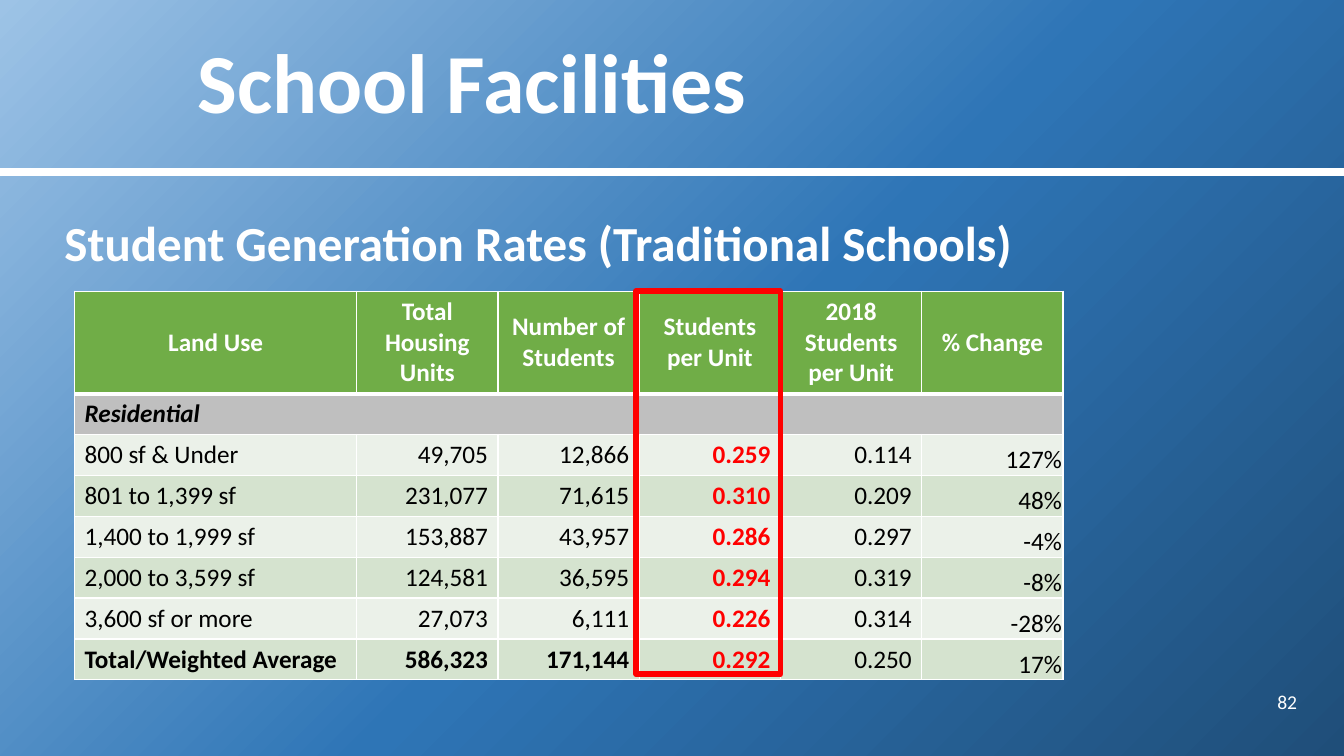
from pptx import Presentation
from pptx.dml.color import RGBColor
from pptx.enum.shapes import MSO_CONNECTOR as Connector, MSO_SHAPE as Shape
from pptx.enum.text import MSO_ANCHOR as Anchor, PP_ALIGN as Align
from pptx.oxml import parse_xml
from pptx.oxml.ns import nsdecls
from pptx.util import Cm, Pt

WHITE = RGBColor(0xFF, 0xFF, 0xFF)
BLACK = RGBColor(0, 0, 0)
RED = RGBColor(0xFF, 0, 0)
GREEN = RGBColor(0x70, 0xAD, 0x47)
GRAY = RGBColor(0xBF, 0xBF, 0xBF)
LIGHT_BAND = RGBColor(0xEB, 0xF1, 0xE9)
DARK_BAND = RGBColor(0xD5, 0xE3, 0xCF)
LIGHT_BLUE = RGBColor(0x9D, 0xC3, 0xE6)
MIDDLE_BLUE = RGBColor(0x2E, 0x75, 0xB6)
DARK_BLUE = RGBColor(0x1F, 0x4E, 0x79)
FONT = "Calibri"

SLIDE_WIDTH, SLIDE_HEIGHT = Cm(33.87), Cm(19.05)
HEADER_HEIGHT, ROW_HEIGHT = Cm(2.57), Cm(1.03)
COLUMN_WIDTHS = [Cm(7.11)] + [Cm(3.56)] * 5
RATE_COLUMN, CHANGE_COLUMN = 3, 5

RATES = [
    ("Land Use", "Total Housing Units", "Number of Students",
     "Students per Unit", "2018 Students per Unit", "% Change"),
    ("Residential", "", "", "", "", ""),
    ("800 sf & Under", "49,705", "12,866", "0.259", "0.114", "127%"),
    ("801 to 1,399 sf", "231,077", "71,615", "0.310", "0.209", "48%"),
    ("1,400 to 1,999 sf", "153,887", "43,957", "0.286", "0.297", "-4%"),
    ("2,000 to 3,599 sf", "124,581", "36,595", "0.294", "0.319", "-8%"),
    ("3,600 sf or more", "27,073", "6,111", "0.226", "0.314", "-28%"),
    ("Total/Weighted Average", "586,323", "171,144", "0.292", "0.250", "17%"),
]
TOTAL_ROW = len(RATES) - 1


def place(shape, left, top, width, height):
    shape.left, shape.top, shape.width, shape.height = left, top, width, height


def write(text_frame, text, size, color, bold=False, italic=False, align=Align.LEFT):
    text_frame.text = text
    paragraph = text_frame.paragraphs[0]
    paragraph.alignment = align
    paragraph.space_before = Pt(0)
    for run in paragraph.runs:
        font = run.font
        font.name, font.size, font.bold, font.italic = FONT, Pt(size), bold, italic
        font.color.rgb = color
    return paragraph


def add_background(slide):
    stops = "".join(
        f'<a:gs pos="{position}"><a:srgbClr val="{color}"/></a:gs>'
        for position, color in ((0, LIGHT_BLUE), (53000, MIDDLE_BLUE), (100000, DARK_BLUE)))
    slide.element[0].insert(0, parse_xml(
        f'<p:bg {nsdecls("p", "a")}><p:bgPr><a:gradFill rotWithShape="1">'
        f'<a:gsLst>{stops}</a:gsLst><a:path path="circle">'
        '<a:fillToRect r="100000" b="100000"/></a:path></a:gradFill>'
        '<a:effectLst/></p:bgPr></p:bg>'))


def add_heading(slide, left, top, width, height):
    bottom = top + height
    rule = slide.shapes.add_connector(Connector.STRAIGHT, 0, bottom, SLIDE_WIDTH, bottom)
    rule.line.color.rgb, rule.line.width = WHITE, Pt(6)
    rule.element.spPr.append(parse_xml(f'<a:effectLst {nsdecls("a")}/>'))
    title = slide.shapes.title
    place(title, left, top, width, height)
    title.text_frame.vertical_anchor = Anchor.MIDDLE
    paragraph = write(title.text_frame, "School Facilities", 60, WHITE, bold=True)
    paragraph.line_spacing = 0.9
    properties = paragraph.runs[0].font.fill
    properties.solid()
    properties.fore_color.rgb = WHITE
    paragraph.runs[0]._r.get_or_add_rPr().find(
        "{http://schemas.openxmlformats.org/drawingml/2006/main}solidFill").addnext(parse_xml(
            f'<a:effectLst {nsdecls("a")}><a:outerShdw blurRad="38100" dist="38100" dir="2700000" algn="tl">'
            '<a:srgbClr val="000000"><a:alpha val="43000"/></a:srgbClr></a:outerShdw></a:effectLst>'))


def add_subtitle(slide, left, top, width, height):
    body = slide.placeholders[1]
    place(body, left, top, width, height)
    body.text_frame.text = ""
    paragraph = write(body.text_frame, "Student Generation Rates (Traditional Schools)",
                      35, WHITE, bold=True)
    paragraph.line_spacing = 1.2
    properties = paragraph._p.get_or_add_pPr()
    properties.set("marL", "0")
    properties.set("indent", "0")
    properties.append(parse_xml(f'<a:buNone {nsdecls("a")}/>'))


def add_borders(cell, bottom_width):
    for side in "LRTB":
        width = Pt(bottom_width if side == "B" else 1)
        cell._tc.get_or_add_tcPr().append(parse_xml(
            f'<a:ln{side} {nsdecls("a")} w="{width}"><a:solidFill>'
            f'<a:srgbClr val="{WHITE}"/></a:solidFill></a:ln{side}>'))


def format_cell(cell, text, row, column):
    header, section = row == 0, row == 1
    rate = row > 1 and column == RATE_COLUMN
    bold = header or section or rate or (row == TOTAL_ROW and column < RATE_COLUMN)
    color = WHITE if header else RED if rate else BLACK
    align = Align.CENTER if header else Align.RIGHT if column else Align.LEFT
    add_borders(cell, 3 if header else 1)
    cell.fill.solid()
    cell.fill.fore_color.rgb = (
        GREEN if header else GRAY if section else DARK_BAND if row % 2 else LIGHT_BAND)
    cell.vertical_anchor = Anchor.MIDDLE
    if row > 1 and column == CHANGE_COLUMN:
        cell.vertical_anchor = Anchor.BOTTOM
        cell.margin_left = cell.margin_top = cell.margin_right = Cm(0.03)
        cell.margin_bottom = 0
    write(cell.text_frame, text, 18, color, bold, section, align)


def add_rates_table(slide, left, top):
    height = HEADER_HEIGHT + TOTAL_ROW * ROW_HEIGHT
    table = slide.shapes.add_table(len(RATES), len(COLUMN_WIDTHS), left, top,
                                   sum(COLUMN_WIDTHS), height).table
    for column, width in zip(table.columns, COLUMN_WIDTHS):
        column.width = width
    for index, values in enumerate(RATES):
        table.rows[index].height = ROW_HEIGHT if index else HEADER_HEIGHT
        for column, text in enumerate(values):
            format_cell(table.cell(index, column), text, index, column)
    table.cell(1, 0).merge(table.cell(1, CHANGE_COLUMN))

    highlight = slide.shapes.add_shape(
        Shape.RECTANGLE, left + sum(COLUMN_WIDTHS[:RATE_COLUMN]) - Cm(0.08), top,
        COLUMN_WIDTHS[RATE_COLUMN] + Cm(0.08), Cm(9.65))
    highlight.shadow.inherit = False
    highlight.fill.background()
    highlight.line.color.rgb, highlight.line.width = RED, Pt(4)


def add_slide_number(slide, left, top, width, height):
    text_frame = slide.shapes.add_textbox(left, top, width, height).text_frame
    text_frame.word_wrap = True
    text_frame.vertical_anchor = Anchor.MIDDLE
    write(text_frame, "82", 14, WHITE, align=Align.RIGHT)


def main():
    presentation = Presentation()
    presentation.slide_width, presentation.slide_height = SLIDE_WIDTH, SLIDE_HEIGHT
    slide = presentation.slides.add_slide(presentation.slide_layouts[1])
    add_background(slide)
    add_heading(slide, Cm(4.72), Cm(0), Cm(28.19), Cm(4.34))
    add_subtitle(slide, Cm(1.37), Cm(4.93), Cm(31.55), Cm(13.39))
    add_rates_table(slide, Cm(1.88), Cm(7.34))
    add_slide_number(slide, Cm(30.68), Cm(17.17), Cm(2.26), Cm(1.02))
    presentation.save("out.pptx")


if __name__ == "__main__":
    main()
